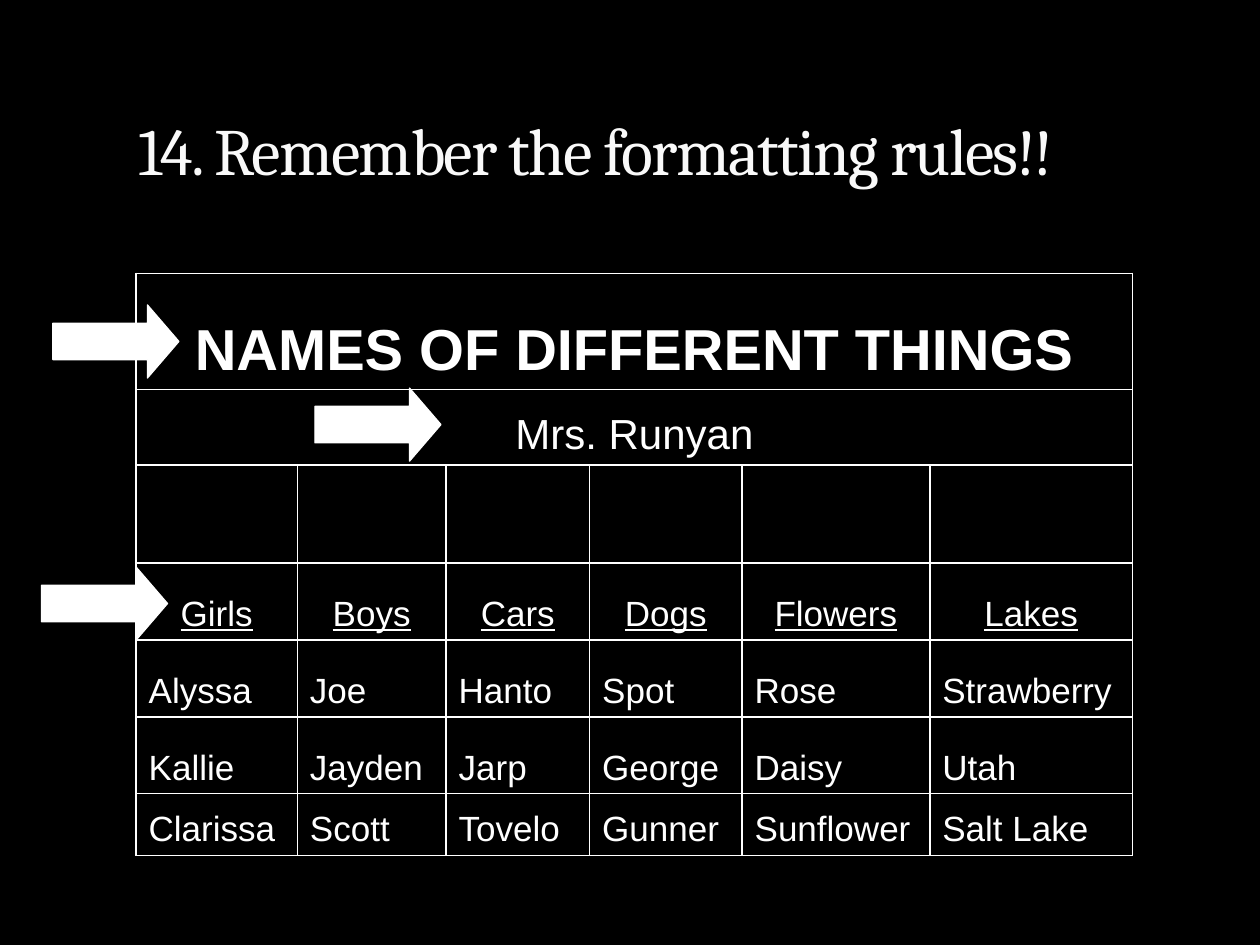
from lxml.etree import SubElement
from pptx import Presentation
from pptx.dml.color import RGBColor
from pptx.enum.shapes import MSO_SHAPE as Shape
from pptx.enum.text import MSO_ANCHOR as Anchor, PP_ALIGN as Align
from pptx.oxml.ns import qn
from pptx.util import Inches, Pt

WHITE, BLACK = "FFFFFF", "000000"
COLUMNS = [1.28, 1.18, 1.14, 1.21, 1.49, 1.61]
ROWS = [0.92, 0.6, 0.78, 0.61, 0.61, 0.61, 0.49]
TABLE_LEFT, TABLE_TOP = 1.08, 2.17
HEADINGS = ["Girls", "Boys", "Cars", "Dogs", "Flowers", "Lakes"]
NAMES = [
    ["Alyssa", "Joe", "Hanto", "Spot", "Rose", "Strawberry"],
    ["Kallie", "Jayden", "Jarp", "George", "Daisy", "Utah"],
    ["Clarissa", "Scott", "Tovelo", "Gunner", "Sunflower", "Salt Lake"],
]
ARROWS = [(0.42, 2.42), (2.5, 3.08), (0.33, 4.5)]


def color(value):
    return RGBColor.from_string(value)


def add_title(slide, text):
    title = slide.shapes.title
    title.left, title.top = Inches(1), Inches(0.3)
    title.width, title.height = Inches(8.5), Inches(1.25)
    title.text_frame.vertical_anchor = Anchor.BOTTOM
    paragraph = title.text_frame.paragraphs[0]
    paragraph.alignment = Align.LEFT
    run = paragraph.add_run()
    run.text = text
    run.font.name, run.font.size = "Cambria", Pt(37.8)
    run.font.color.rgb = color("F9F9F9")
    run.font._element.set("spc", "-100")  # tighter letters


def style_cell(cell):
    """Give a cell white 1 pt borders and a black fill."""
    properties = cell._tc.get_or_add_tcPr()
    for side in ("a:lnL", "a:lnR", "a:lnT", "a:lnB"):
        line = SubElement(properties, qn(side), w=str(Pt(1)))
        fill = SubElement(line, qn("a:solidFill"))
        SubElement(fill, qn("a:srgbClr"), val=WHITE)
    cell.fill.solid()
    cell.fill.fore_color.rgb = color(BLACK)
    cell.vertical_anchor = Anchor.BOTTOM


def write_cell(cell, text, size=20, align=Align.LEFT, bold=False, underline=False):
    cell.text = text
    paragraph = cell.text_frame.paragraphs[0]
    paragraph.alignment = align
    font = paragraph.font
    font.name, font.size = "Arial", Pt(size)
    font.bold, font.underline = bold, underline
    font.color.rgb = color(WHITE)


def add_names_table(slide):
    frame = slide.shapes.add_table(
        len(ROWS), len(COLUMNS), Inches(TABLE_LEFT), Inches(TABLE_TOP),
        Inches(sum(COLUMNS)), Inches(sum(ROWS)))
    table = frame.table
    for column, width in zip(table.columns, COLUMNS):
        column.width = Inches(width)
    for row, height in zip(table.rows, ROWS):
        row.height = Inches(height)
    for cell in table.iter_cells():
        style_cell(cell)

    # Heading and author run across all columns
    for row in (0, 1):
        table.cell(row, 0).merge(table.cell(row, len(COLUMNS) - 1))
    write_cell(table.cell(0, 0), "NAMES OF DIFFERENT THINGS", 33, Align.CENTER, bold=True)
    write_cell(table.cell(1, 0), "Mrs. Runyan", 24, Align.CENTER)

    # Column headings, then the names below them
    for column, heading in enumerate(HEADINGS):
        write_cell(table.cell(3, column), heading, align=Align.CENTER, underline=True)
    for row, names in enumerate(NAMES, start=4):
        for column, name in enumerate(names):
            write_cell(table.cell(row, column), name)


def add_arrow(slide, left, top):
    arrow = slide.shapes.add_shape(
        Shape.RIGHT_ARROW, Inches(left), Inches(top), Inches(1), Inches(0.58))
    arrow.adjustments[0], arrow.adjustments[1] = 0.5, 0.43
    arrow.shadow.inherit = False
    arrow.fill.solid()
    arrow.fill.fore_color.rgb = color(WHITE)
    arrow.line.color.rgb = color(WHITE)
    arrow.line.width = Pt(0.75)


def main():
    presentation = Presentation()
    presentation.slide_width, presentation.slide_height = Inches(10), Inches(7.5)
    slide = presentation.slides.add_slide(presentation.slide_layouts[5])
    slide.background.fill.solid()
    slide.background.fill.fore_color.rgb = color(BLACK)

    add_title(slide, "14. Remember the formatting rules!!")
    add_names_table(slide)
    for left, top in ARROWS:
        add_arrow(slide, left, top)
    presentation.save("out.pptx")


if __name__ == "__main__":
    main()
